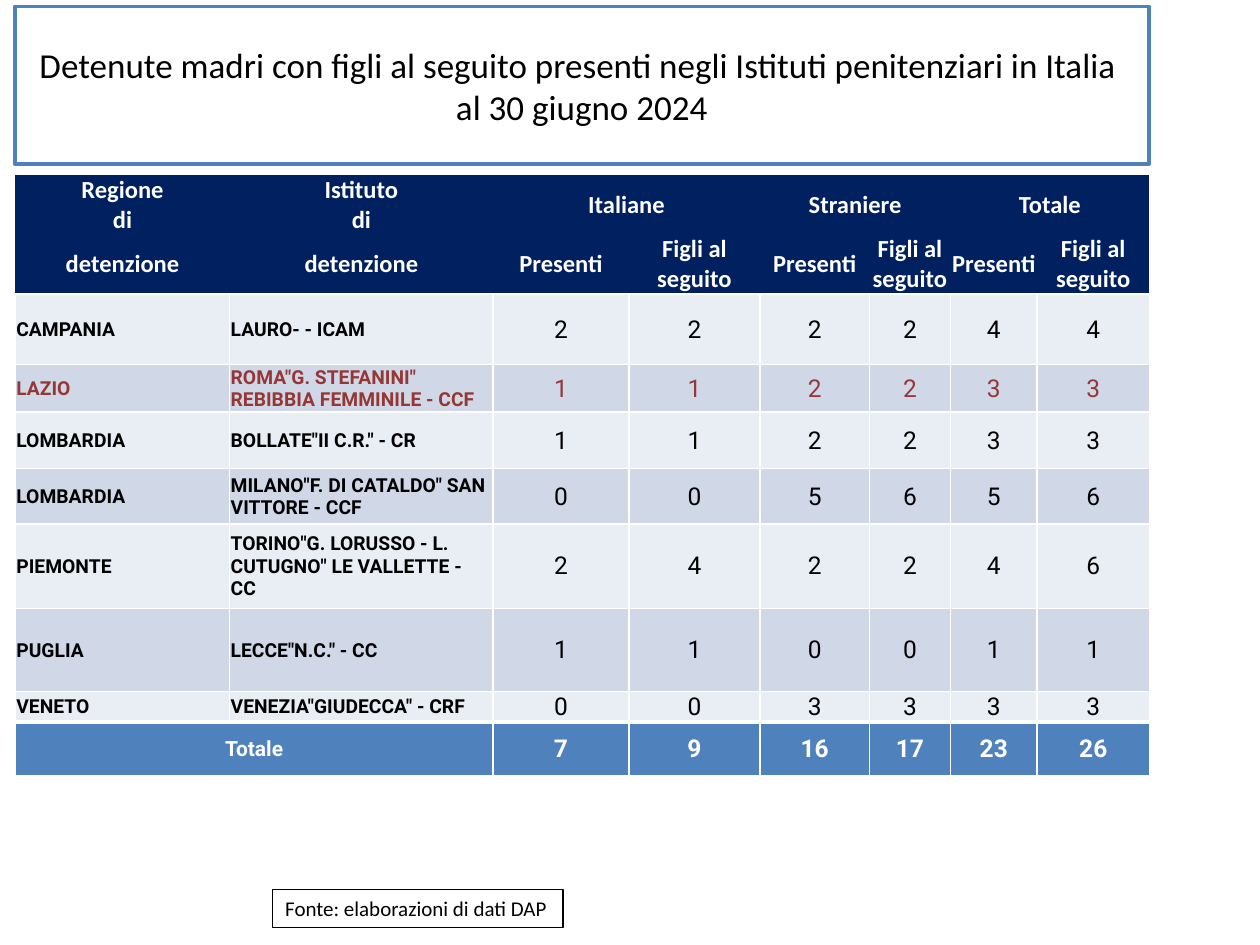
import pptx
import pptx.dml.color
import pptx.enum.shapes
import pptx.enum.text
import pptx.util
from lxml import etree

Cm, Pt = pptx.util.Cm, pptx.util.Pt
RGBColor = pptx.dml.color.RGBColor
PP_ALIGN = pptx.enum.text.PP_ALIGN
MSO_ANCHOR = pptx.enum.text.MSO_ANCHOR

WHITE = RGBColor(0xFF, 0xFF, 0xFF)
BLACK = RGBColor(0, 0, 0)
NAVY = RGBColor(0x00, 0x20, 0x60)
BLUE = RGBColor(0x4F, 0x81, 0xBD)
RED = RGBColor(0x95, 0x37, 0x35)
BANDS = (RGBColor(0xE9, 0xED, 0xF4), RGBColor(0xD0, 0xD8, 0xE8))

TITLE = ("Detenute madri con figli al seguito presenti negli Istituti "
         "penitenziari in Italia \val 30 giugno 2024")
SOURCE = "Fonte: elaborazioni di dati DAP"

HEADER = [
    ["Regione", "Istituto", "Italiane", "", "Straniere", "", "Totale", ""],
    ["di", "di"] + [""] * 6,
    ["detenzione"] * 2 + ["Presenti", "Figli al seguito"] * 3,
]
PRISONS = [
    ("CAMPANIA", "LAURO- - ICAM", 2, 2, 2, 2, 4, 4),
    ("LAZIO", 'ROMA"G. STEFANINI" REBIBBIA FEMMINILE - CCF', 1, 1, 2, 2, 3, 3),
    ("LOMBARDIA", 'BOLLATE"II C.R." - CR', 1, 1, 2, 2, 3, 3),
    ("LOMBARDIA", 'MILANO"F. DI CATALDO" SAN VITTORE - CCF', 0, 0, 5, 6, 5, 6),
    ("PIEMONTE", 'TORINO"G. LORUSSO - L. CUTUGNO" LE VALLETTE - CC',
     2, 4, 2, 2, 4, 6),
    ("PUGLIA", 'LECCE"N.C." - CC', 1, 1, 0, 0, 1, 1),
    ("VENETO", 'VENEZIA"GIUDECCA" - CRF', 0, 0, 3, 3, 3, 3),
]
TOTAL = ("Totale", "", 7, 9, 16, 17, 23, 26)
HIGHLIGHTED = "LAZIO"

COL_WIDTHS = [4.32, 5.31, 2.74, 2.64, 2.21, 1.63, 1.75, 2.26]
ROW_HEIGHTS = [0.6, 0.6, 1.2, 1.42, 0.95, 1.14, 1.12, 1.7, 1.68, 0.6, 1.09]


def write(tf, text, align, color, **font):
    p = tf.paragraphs[0]
    p.text = text
    p.alignment = align
    for r in p.runs:
        r.font.color.rgb = color
        for name, value in font.items():
            setattr(r.font, name, value)


def add_box(s, box, line, line_width):
    sp = s.shapes.add_shape(pptx.enum.shapes.MSO_SHAPE.RECTANGLE,
                            *(Cm(v) for v in box))
    sp.shadow.inherit = False
    sp.fill.solid()
    sp.fill.fore_color.rgb = WHITE
    sp.line.color.rgb = line
    sp.line.width = Pt(line_width)
    return sp


def set_borders(cell, widths):
    """Draw white borders; widths maps sides L, R, T, B to points, 0 for none."""
    tc_pr = cell._tc.get_or_add_tcPr()
    ns = "{%s}" % tc_pr.nsmap["a"]
    for side, width in widths.items():
        ln = etree.SubElement(tc_pr, ns + "ln" + side, w=str(Pt(width)))
        if width:
            fill = etree.SubElement(ln, ns + "solidFill")
            etree.SubElement(fill, ns + "srgbClr", val=str(WHITE))
        else:
            etree.SubElement(ln, ns + "noFill")


def format_cell(cell, text, fill, margin, borders, align, color, **font):
    set_borders(cell, borders)
    cell.fill.solid()
    cell.fill.fore_color.rgb = fill
    layout = {"vertical_anchor": MSO_ANCHOR.MIDDLE, "margin_left": Cm(margin),
              "margin_right": Cm(margin), "margin_top": Cm(margin),
              "margin_bottom": 0}
    for name, value in layout.items():
        setattr(cell, name, value)
    write(cell.text_frame, text, align, color, **font)


def add_prison_table(s):
    rows = HEADER + PRISONS + [TOTAL]
    frame = s.shapes.add_table(len(rows), len(COL_WIDTHS), Cm(0.31), Cm(3.53),
                               Cm(sum(COL_WIDTHS)), Cm(sum(ROW_HEIGHTS)))
    table = frame.table
    table.first_row = table.horz_banding = False
    for col, width in zip(table.columns, COL_WIDTHS):
        col.width = Cm(width)
    for row, height in zip(table.rows, ROW_HEIGHTS):
        row.height = Cm(height)
    for c in (2, 4, 6):
        table.cell(0, c).merge(table.cell(1, c + 1))
    last = len(rows) - 1
    table.cell(last, 0).merge(table.cell(last, 1))

    for i, values in enumerate(rows):
        for j, value in enumerate(values):
            label = j < 2
            look = {"align": PP_ALIGN.CENTER, "color": WHITE, "bold": True,
                    "name": "Roboto", "size": Pt(14), "margin": 0.02,
                    "borders": dict(L=1, R=1, T=1, B=1)}
            if i < len(HEADER):
                look.update(fill=NAVY, name="Calibri", margin=0,
                            borders=dict(L=0, R=0, T=0, B=0))
            elif i == last:
                look.update(fill=BLUE, borders=dict(L=1, R=1, T=3, B=1),
                            size=Pt(12 if label else 14))
            else:
                look.update(fill=BANDS[(i - len(HEADER)) % 2], bold=label,
                            color=RED if values[0] == HIGHLIGHTED else BLACK)
                if label:
                    look.update(align=PP_ALIGN.LEFT, size=Pt(11))
            format_cell(table.cell(i, j), str(value), **look)


def main():
    prs = pptx.Presentation()
    prs.slide_width, prs.slide_height = Cm(25.4), Cm(19.05)
    s = prs.slides.add_slide(prs.slide_layouts[6])

    title = add_box(s, (0.3, 0.13, 22.86, 3.18), BLUE, 2)
    title.text_frame.word_wrap = True
    title.text_frame.vertical_anchor = MSO_ANCHOR.MIDDLE
    write(title.text_frame, TITLE, PP_ALIGN.CENTER, BLACK,
          name="Calibri", size=Pt(20))

    source = add_box(s, (5.5, 17.93, 5.85, 0.77), BLACK, 0.75)
    source.text_frame.word_wrap = False
    source.text_frame.auto_size = pptx.enum.text.MSO_AUTO_SIZE.SHAPE_TO_FIT_TEXT
    source.text_frame.vertical_anchor = MSO_ANCHOR.TOP
    write(source.text_frame, SOURCE, PP_ALIGN.LEFT, BLACK,
          name="Calibri", size=Pt(12))

    add_prison_table(s)
    prs.save("out.pptx")


if __name__ == "__main__":
    main()
